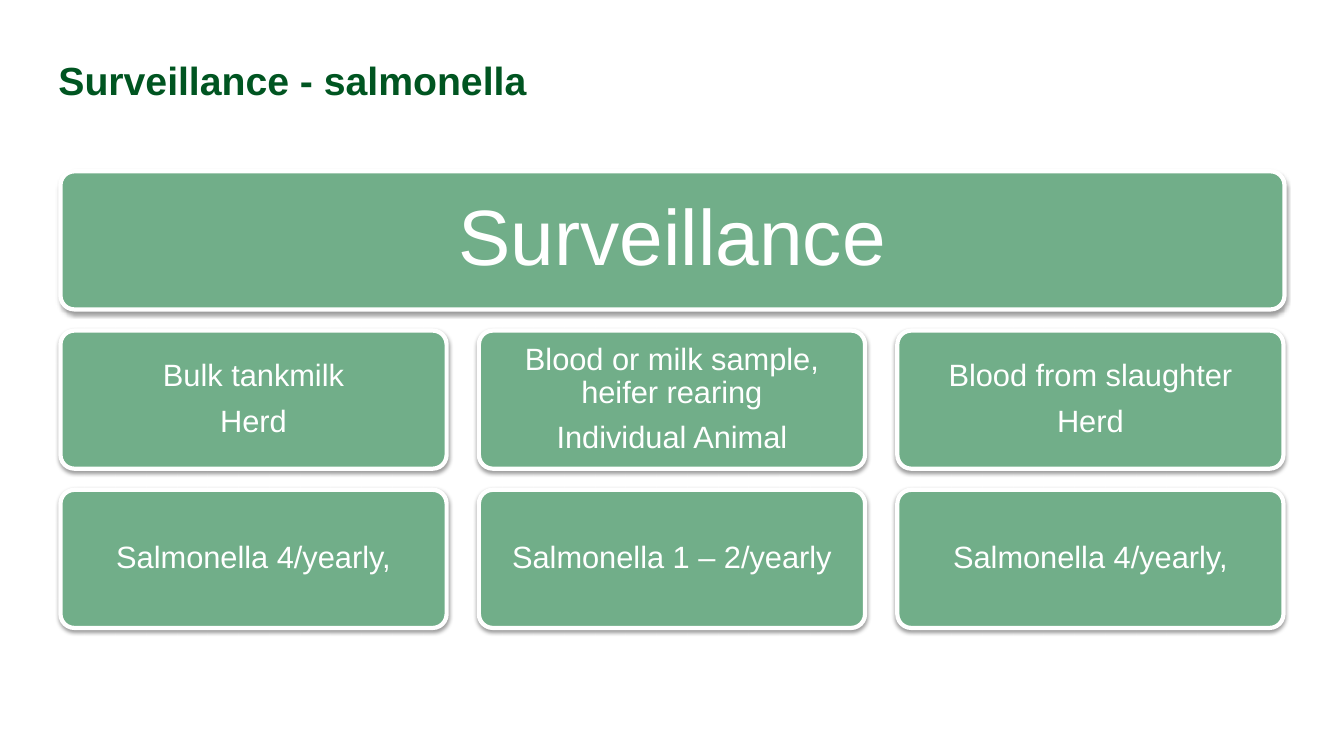
from lxml import etree
from pptx import Presentation
from pptx.dml.color import RGBColor
from pptx.enum import shapes, text
from pptx.oxml import ns
from pptx.util import Inches, Pt


def color(value):
    return RGBColor.from_string(value)


class SlideBuilder:
    FONT = "Arial"
    TITLE_COLOR = "005521"
    CARD_COLOR = "71AE89"
    WHITE = "FFFFFF"

    def __init__(self, slide):
        self.slide = slide

    def set_lines(self, box, lines, size, ink, align, inset=0.0, bold=False):
        frame = box.text_frame
        frame.word_wrap = True
        frame.vertical_anchor = text.MSO_ANCHOR.MIDDLE
        frame.margin_left = frame.margin_right = Inches(inset)
        frame.margin_top = frame.margin_bottom = Inches(inset)
        frame.text = "\n".join(lines)
        for para in frame.paragraphs:
            para.alignment = align
            para.line_spacing = 0.9
            for span in para.runs:
                span.font.name = self.FONT
                span.font.size = Pt(size)
                span.font.bold = bold
                span.font.color.rgb = color(ink)
        for para in frame.paragraphs[:-1]:
            para.space_after = Pt(round(size * 0.4, 1))

    def title(self, words, left, top, width, height):
        box = self.slide.shapes.add_textbox(
            Inches(left), Inches(top), Inches(width), Inches(height))
        self.set_lines(box, [words], 28, self.TITLE_COLOR, text.PP_ALIGN.LEFT, bold=True)

    def card(self, lines, left, top, width, height, size=22, inset=0.09):
        box = self.slide.shapes.add_shape(
            shapes.MSO_SHAPE.ROUNDED_RECTANGLE,
            Inches(left), Inches(top), Inches(width), Inches(height))
        box.adjustments[0] = 0.1
        box.fill.solid()
        box.fill.fore_color.rgb = color(self.CARD_COLOR)
        box.line.color.rgb = color(self.WHITE)
        box.line.width = Pt(3)
        self.soft_shadow(box)
        self.set_lines(box, lines, size, self.WHITE, text.PP_ALIGN.CENTER, inset)

    def soft_shadow(self, box):
        """Cast a blurred, partly transparent shadow straight down."""
        box.shadow.inherit = False
        effects = box.element.spPr.find(ns.qn("a:effectLst"))
        shadow = etree.SubElement(
            effects, ns.qn("a:outerShdw"), blurRad=str(Pt(3.1)), dist=str(Pt(1.6)),
            dir="5400000", rotWithShape="0")
        tint = etree.SubElement(shadow, ns.qn("a:srgbClr"), val="000000")
        etree.SubElement(tint, ns.qn("a:alpha"), val="38000")


def main():
    deck = Presentation()
    deck.slide_width, deck.slide_height = Inches(13.33), Inches(7.5)
    page = SlideBuilder(deck.slides.add_slide(deck.slide_layouts[6]))

    page.title("Surveillance - salmonella", 0.58, 0.43, 10.26, 0.78)

    left, top = 0.6, 1.7
    card_width, card_height = 3.83, 1.37
    column_step, row_step = 4.15, 1.58
    page.card(["Surveillance"], left, top, 2 * column_step + card_width + 0.01,
              card_height, size=56, inset=0.23)

    columns = [
        (["Bulk tankmilk", "Herd"], ["Salmonella 4/yearly,"]),
        (["Blood or milk sample, heifer rearing", "Individual Animal"],
         ["Salmonella 1 – 2/yearly"]),
        (["Blood from slaughter", "Herd"], ["Salmonella 4/yearly,"]),
    ]
    for column, cards in enumerate(columns):
        for row, lines in enumerate(cards, start=1):
            page.card(lines, left + column * column_step, top + row * row_step,
                      card_width, card_height)

    deck.save("out.pptx")


if __name__ == "__main__":
    main()
